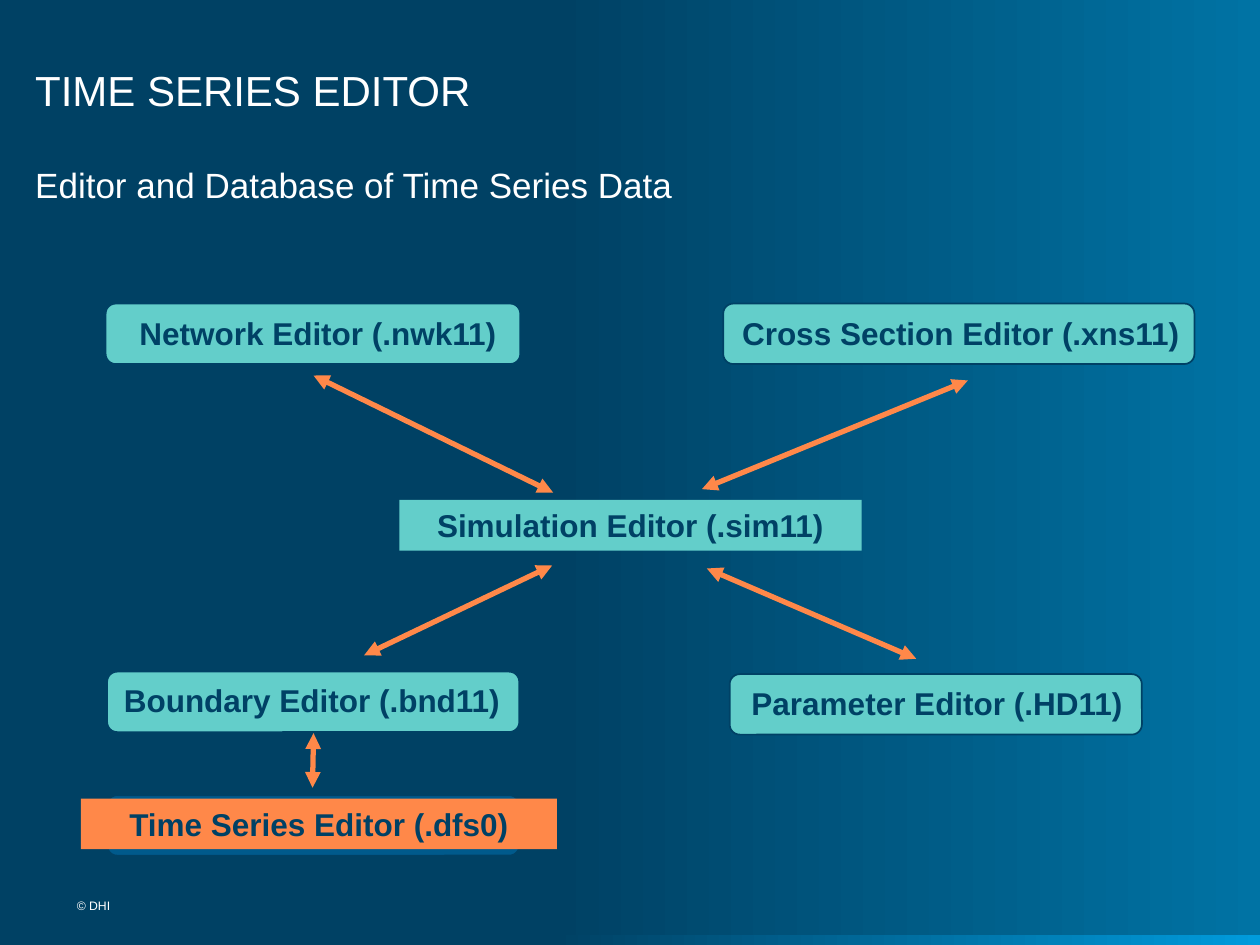
from dataclasses import dataclass
from pptx import Presentation, util as u
from pptx.dml.color import RGBColor as Rgb
from pptx.enum import shapes as sh, text as tx
from pptx.oxml.ns import qn
from lxml import etree


@dataclass(frozen=True)
class Theme:
    font: str = "Arial"
    navy: str = "004165"
    dark: str = "004164"
    sea: str = "0073A4"
    sky: str = "009BDC"
    teal: str = "63CECA"
    deep: str = "005A8C"
    coral: str = "FF8849"
    white: str = "FFFFFF"
    title: int = 24
    lead: int = 20
    label: int = 18
    foot: int = 7


class Deck:
    """Draw styled elements on the current slide."""

    def __init__(self, theme):
        self.theme = theme
        self.prs = Presentation()
        self.prs.slide_width, self.prs.slide_height = u.Cm(25.4), u.Cm(19.05)
        self.slide = self.prs.slides.add_slide(self.prs.slide_layouts[6])

    def fade(self, fill, end):
        fill.gradient()
        fill.gradient_angle = 0
        stops = zip(fill.gradient_stops, (0.44, 1), (self.theme.dark, end))
        for stop, place, color in stops:
            stop.position = place
            stop.color.rgb = Rgb.from_string(color)

    def box(self, area, fill=None, edge=None, kind="RECTANGLE"):
        form = self.slide.shapes.add_shape(
            sh.MSO_SHAPE[kind], *map(u.Cm, area))
        form.shadow.inherit = False
        if fill:
            form.fill.solid()
            form.fill.fore_color.rgb = Rgb.from_string(fill)
        if edge:
            form.line.color.rgb = Rgb.from_string(edge)
            form.line.width = u.Pt(1)
        else:
            form.line.fill.background()
        return form

    def card(self, area, fill):
        return self.box(area, fill, self.theme.navy, "ROUNDED_RECTANGLE")

    def words(self, form, words, size, color, bold=False, align="LEFT",
              anchor="TOP", inset=None):
        frame = form.text_frame
        frame.word_wrap = True
        frame.vertical_anchor = tx.MSO_ANCHOR[anchor]
        if inset is not None:
            frame.margin_left = frame.margin_right = u.Cm(inset)
            frame.margin_top = frame.margin_bottom = u.Cm(inset)
        para = frame.paragraphs[0]
        para.alignment = tx.PP_ALIGN[align]
        run = para.add_run()
        run.text = words
        run.font.name, run.font.size = self.theme.font, u.Pt(size)
        run.font.bold = bold
        run.font.color.rgb = Rgb.from_string(color)

    def text(self, area, words, size, anchor="TOP"):
        form = self.slide.shapes.add_textbox(*map(u.Cm, area))
        self.words(form, words, size, self.theme.white, anchor=anchor, inset=0)

    def label(self, area, words, fill=None, align="CENTER"):
        if fill:
            form = self.box(area, fill)
        else:
            form = self.slide.shapes.add_textbox(*map(u.Cm, area))
        self.words(form, words, self.theme.label, self.theme.navy, True,
                   align, "MIDDLE")

    def arrow(self, start, end):
        link = self.slide.shapes.add_connector(
            sh.MSO_CONNECTOR.STRAIGHT, *map(u.Cm, start + end))
        link.line.color.rgb = Rgb.from_string(self.theme.coral)
        link.line.width = u.Pt(3)
        props = link._element.spPr
        for tip in ("a:headEnd", "a:tailEnd"):
            etree.SubElement(props.find(qn("a:ln")), qn(tip), type="triangle")
        etree.SubElement(props, qn("a:effectLst"))


def main():
    look = Theme()
    deck = Deck(look)
    deck.fade(deck.slide.background.fill, look.sea)
    deck.fade(deck.box((0, 18.85, 25.4, 0.2)).fill, look.sky)

    editors = [
        ((14.71, 13.59, 8.31), (14.1, 13.67, 9.58),
         "Parameter Editor (.HD11)", "CENTER"),
        ((14.58, 6.12, 9.5), (14.71, 6.2, 9.68),
         "Cross Section Editor (.xns11)", "LEFT"),
        ((2.13, 6.12, 8.36), (2.51, 6.2, 7.8),
         "Network Editor (.nwk11)", "CENTER"),
        ((2.16, 13.54, 8.31), (1.5, 13.61, 9.58),
         "Boundary Editor (.bnd11)", "CENTER"),
    ]
    for card, area, words, align in editors:
        deck.card(card + (1.22,), look.teal)
        deck.label(area + (1.02,), words, align=align)

    deck.label((8.05, 10.08, 9.32, 1.02), "Simulation Editor (.sim11)",
               look.teal)
    deck.card((2.16, 16.03, 8.31, 1.22), look.deep)
    deck.label((1.63, 16.1, 9.6, 1.02), "Time Series Editor (.dfs0)",
               look.coral)

    for start, end in [
        ((11.15, 9.93), (6.32, 7.57)),
        ((14.15, 9.86), (19.51, 7.67)),
        ((7.34, 13.21), (11.13, 11.4)),
        ((18.47, 13.28), (14.25, 11.46)),
        ((6.3, 15.88), (6.32, 14.78)),
    ]:
        deck.arrow(start, end)

    deck.text((0.71, 0.64, 21.84, 1.68), "TIME SERIES EDITOR", look.title,
              "BOTTOM")
    deck.text((0.71, 3.3, 24, 14.22),
              "Editor and Database of Time Series Data", look.lead)
    deck.text((1.55, 18.11, 3.94, 0.48), "© DHI", look.foot)
    deck.prs.save("out.pptx")


if __name__ == "__main__":
    main()
